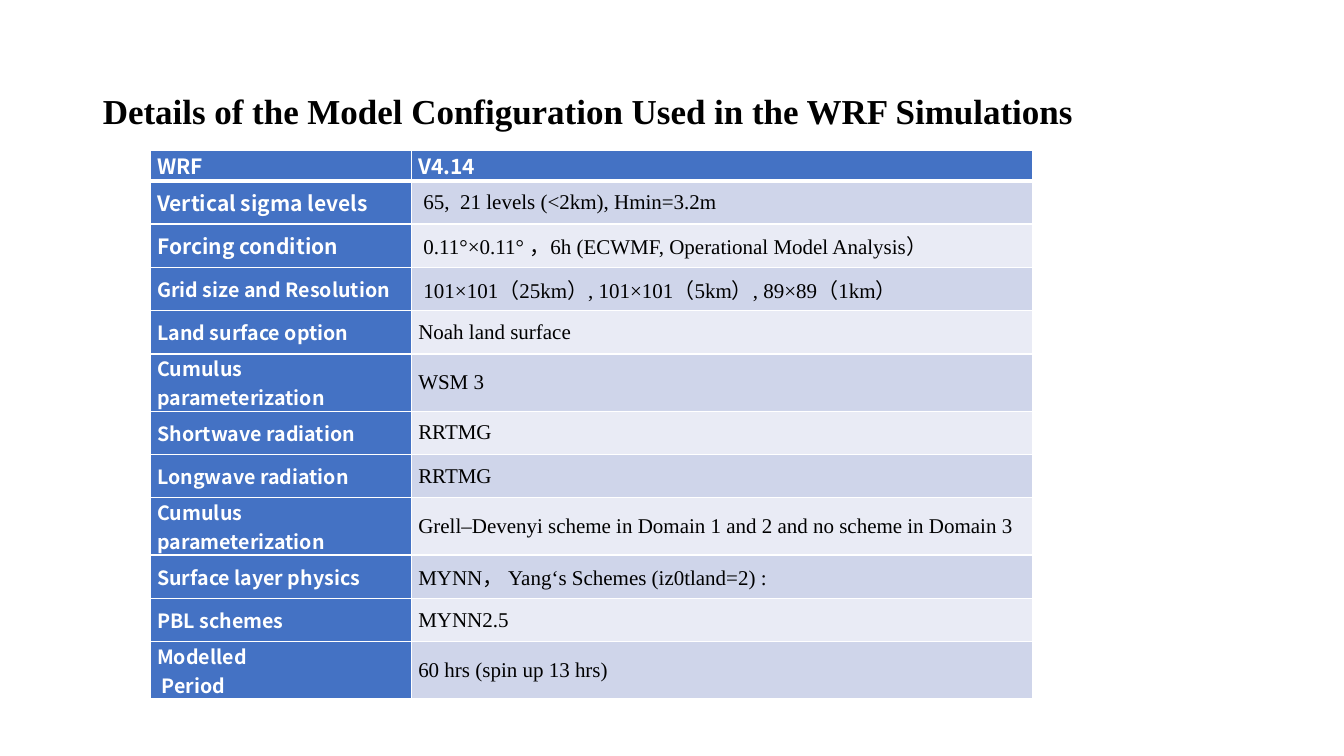
from pptx import Presentation, util as u
from pptx.dml.color import RGBColor
from pptx.enum import text
from pptx.oxml import parse_xml
from pptx.oxml.ns import nsdecls

BLUE, WHITE, BLACK = "4472C4", "FFFFFF", "000000"
BANDS = "CFD5EA", "E9EBF5"
SANS, SERIF = "Noto Sans CJK SC", "Times New Roman"

ROWS = [
    ("WRF", "V4.14"),
    ("Vertical sigma levels", " 65,  21 levels (<2km), Hmin=3.2m"),
    ("Forcing condition", " 0.11°×0.11° ，6h (ECWMF, Operational Model Analysis）"),
    ("Grid size and Resolution", " 101×101（25km）, 101×101（5km）, 89×89（1km）"),
    ("Land surface option", "Noah land surface"),
    ("Cumulus parameterization", "WSM 3"),
    ("Shortwave radiation", "RRTMG"),
    ("Longwave radiation", "RRTMG"),
    ("Cumulus parameterization",
     "Grell–Devenyi scheme in Domain 1 and 2 and no scheme in Domain 3"),
    ("Surface layer physics", "MYNN， Yang‘s Schemes (iz0tland=2) :"),
    ("PBL schemes", "MYNN2.5"),
    ("Modelled\n Period", "60 hrs (spin up 13 hrs)"),
]


def color(code):
    return RGBColor.from_string(code)


class Deck:
    def __init__(self):
        self.show = Presentation()
        self.show.slide_width = u.Inches(13.33)
        self.show.slide_height = u.Inches(7.5)
        self.slide = self.show.slides.add_slide(self.show.slide_layouts[5])

    def col(self, n):
        return round(self.show.slide_width * n / 40)

    def row(self, n):
        return round(self.show.slide_height * n / 30)

    def style(self, frame, size, face, ink, bold, align):
        for para in frame.paragraphs:
            para.alignment = align
            for run in para.runs:
                font = run.font
                font.size, font.name, font.bold = u.Pt(size), face, bold
                font.color.rgb = color(ink)

    def title(self, words, left, top, wide, high):
        box = self.slide.shapes.title
        box.left, box.top = self.col(left), self.row(top)
        box.width, box.height = self.col(wide), self.row(high)
        frame = box.text_frame
        frame.text = words
        frame.auto_size = text.MSO_AUTO_SIZE.NONE
        frame.vertical_anchor = text.MSO_ANCHOR.MIDDLE
        frame.paragraphs[0].line_spacing = 0.9
        self.style(frame, 25, SERIF, BLACK, True, text.PP_ALIGN.LEFT)

    def edges(self, cell, top, base):
        props = cell._tc.get_or_add_tcPr()
        for i, (side, size) in enumerate(zip("LRTB", (1, 1, top, base))):
            props.insert(i, parse_xml(
                f'<a:ln{side} {nsdecls("a")} w="{u.Pt(size)}"><a:solidFill>'
                f'<a:srgbClr val="{WHITE}"/></a:solidFill></a:ln{side}>'))

    def cell(self, cell, words, r, c):
        head = r == 0 or c == 0
        cell.text_frame.text = words
        cell.vertical_anchor = text.MSO_ANCHOR.MIDDLE
        cell.margin_left = cell.margin_right = u.Inches(0.07)
        cell.margin_top = cell.margin_bottom = 0
        cell.fill.solid()
        cell.fill.fore_color.rgb = color(BLUE if head else BANDS[(r - 1) % 2])
        self.edges(cell, 3 if r == 1 else 1, 3 if r == 0 else 1)
        size = 14 if c == 0 and r > 2 else 15
        face, ink = (SANS, WHITE) if head else (SERIF, BLACK)
        self.style(cell.text_frame, size, face, ink, head, text.PP_ALIGN.JUSTIFY)

    def table(self, rows, left, top, wides, highs):
        grid = self.slide.shapes.add_table(
            len(rows), len(wides), self.col(left), self.row(top),
            self.col(sum(wides)), self.row(sum(highs))).table
        for part, wide in zip(grid.columns, wides):
            part.width = self.col(wide)
        for part, high in zip(grid.rows, highs):
            part.height = self.row(high)
        for r, line in enumerate(rows):
            for c, words in enumerate(line):
                self.cell(grid.cell(r, c), words, r, c)


def main():
    deck = Deck()
    deck.table(ROWS, 4.47, 5.96, (7.77, 18.48),
               [1.08] + [1.72] * (len(ROWS) - 2) + [2])
    deck.title("Details of the Model Configuration Used in the WRF Simulations",
               2.76, 1.6, 34.5, 5.8)
    deck.show.save("out.pptx")


if __name__ == "__main__":
    main()
